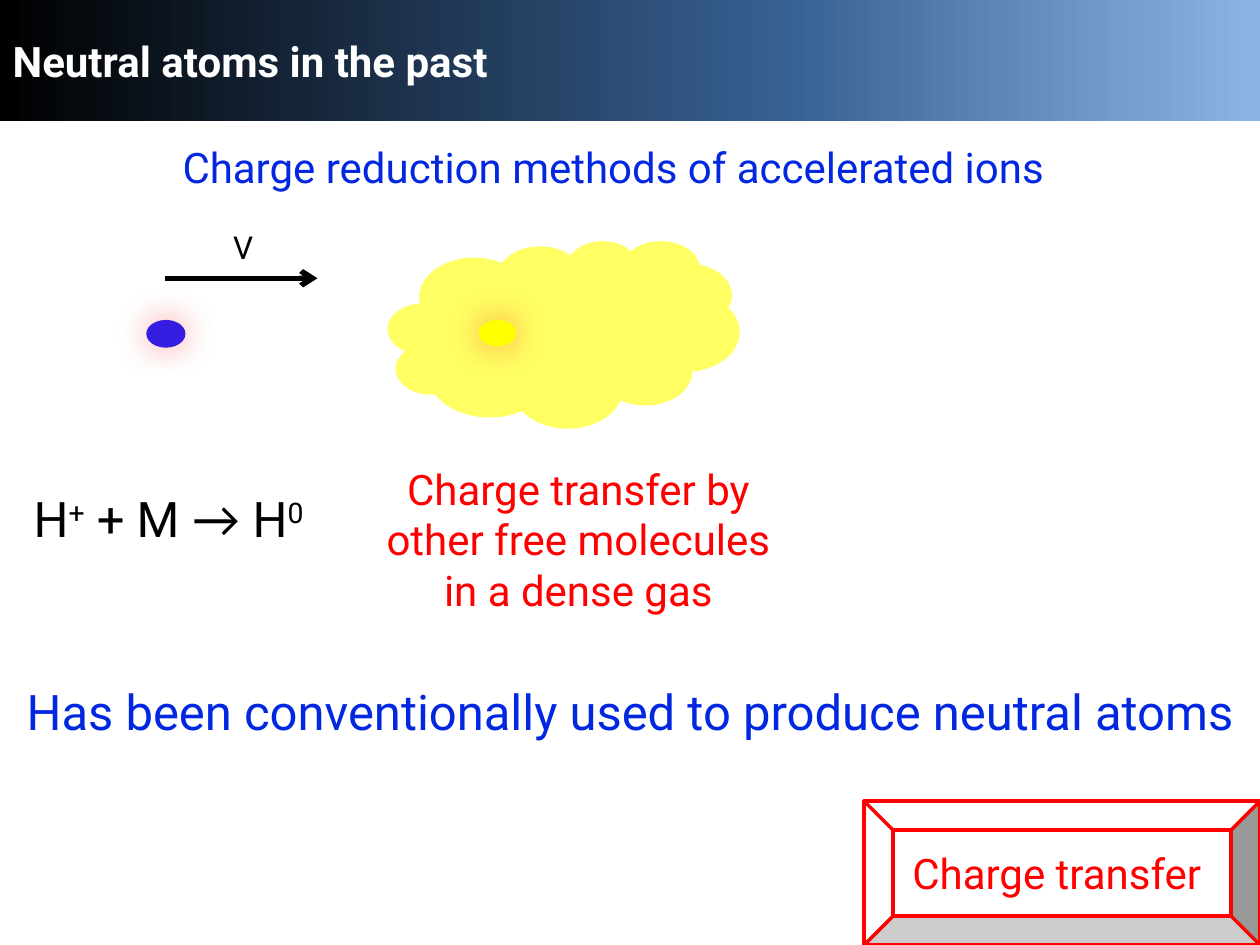
from lxml.etree import SubElement
from pptx import Presentation
from pptx.dml.color import RGBColor
from pptx.enum.shapes import MSO_CONNECTOR as Link, MSO_SHAPE as Kind
from pptx.enum.text import MSO_ANCHOR as Anchor, MSO_AUTO_SIZE as Fit, PP_ALIGN as Align
from pptx.oxml.ns import qn
from pptx.util import Cm, Pt

HUE = {"black": "000000", "white": "FFFFFF", "red": "FF0000", "blue": "0227E0",
       "ion": "351EE2", "gas": "FFFF00", "steel": "376092", "sky": "8EB4E3"}


def color(name):
    """Return the named colour."""
    return RGBColor.from_string(HUE[name])


def place(box):
    """Turn a box in centimetres into lengths."""
    return [Cm(n) for n in box]


def tint(parent, name, alpha):
    """Add a partly clear colour to an XML element."""
    node = SubElement(parent, qn("a:srgbClr"), val=HUE[name])
    SubElement(node, qn("a:alpha"), val=str(alpha * 1000))


def write(frame, parts, size=24, hue="black", bold=False, align=Align.LEFT,
          wrap=True, anchor=Anchor.TOP, fit=Fit.NONE):
    """Fill a frame with one paragraph of (text, font, baseline) parts."""
    if isinstance(parts, str):
        parts = [(parts, "Roboto", 0)]
    frame.word_wrap, frame.auto_size, frame.vertical_anchor = wrap, fit, anchor
    line = frame.paragraphs[0]
    line.alignment = align
    for text, face, base in parts:
        run = line.add_run()
        run.text = text
        font = run.font
        font.name, font.size, font.bold = face, Pt(size), bold
        font.color.rgb = color(hue)
        if base:
            run._r.get_or_add_rPr().set("baseline", str(base * 1000))


def label(slide, box, parts, **style):
    """Add a text box that grows with its text."""
    area = slide.shapes.add_textbox(*place(box))
    write(area.text_frame, parts, fit=Fit.SHAPE_TO_FIT_TEXT, **style)


def shape(slide, kind, box, hue):
    """Add a plain filled shape without an outline."""
    item = slide.shapes.add_shape(kind, *place(box))
    item.shadow.inherit = False
    item.fill.solid()
    item.fill.fore_color.rgb = color(hue)
    item.line.fill.background()
    return item


def header(slide, box):
    """Draw the gradient banner and set the title on it."""
    x, y, w, h = box
    band = shape(slide, Kind.RECTANGLE, box, "black")
    band.fill.gradient()
    band.fill.gradient_angle = 0
    stops = band._element.spPr.find(qn("a:gradFill")).find(qn("a:gsLst"))
    for stop in list(stops):
        stops.remove(stop)
    for spot, name in ((0, "black"), (62, "steel"), (100, "sky")):
        stop = SubElement(stops, qn("a:gs"), pos=str(spot * 1000))
        SubElement(stop, qn("a:srgbClr"), val=HUE[name])
    title = slide.shapes.title
    title._element.addprevious(band._element)
    title.left, title.top, title.width, title.height = place((x, y, w * 0.9, h))
    write(title.text_frame, "Neutral atoms in the past", hue="white", bold=True,
          anchor=Anchor.MIDDLE)


def atom(slide, box, hue):
    """Draw an atom with a soft red halo."""
    core = shape(slide, Kind.OVAL, box, hue)
    halo = SubElement(core._element.spPr.find(qn("a:effectLst")), qn("a:outerShdw"),
                      blurRad=str(Pt(20)), dist="0", dir="0", algn="ctr", rotWithShape="0")
    tint(halo, "red", 40)


def arrow(slide, x, y, length):
    """Draw a level arrow to the right."""
    link = slide.shapes.add_connector(Link.STRAIGHT, *place((x, y, x + length, y)))
    link.line.color.rgb = color("black")
    link.line.width = Pt(3)
    SubElement(link.line._get_or_add_ln(), qn("a:tailEnd"), type="arrow")
    SubElement(link._element.spPr, qn("a:effectLst"))


def scene(slide, box):
    """Show a moving ion that meets a gas cloud."""
    x, y, w, h = box
    cloud = shape(slide, Kind.CLOUD, (x + w - 7.09, y + 0.38, 7.09, 3.78), "gas")
    solid = cloud._element.spPr.find(qn("a:solidFill"))
    solid.clear()
    tint(solid, "gas", 61)
    arrow(slide, x + 0.38, y + 1.14, 3.07)
    label(slide, (x + 1.5, y, 0.94, 1.02), "V", size=18, wrap=False)
    atom(slide, (x, y + 1.98, 0.79, 0.56), "ion")
    atom(slide, (x + 6.7, y + 1.98, 0.76, 0.53), "gas")


def process(slide, box):
    """Write the reaction and its explanation side by side."""
    x, y, w, h = box
    label(slide, (x + w - 8.64, y, 8.64, h),
          "Charge transfer by other free molecules in a dense gas",
          hue="red", align=Align.CENTER)
    label(slide, (x, y + 0.51, 6.22, 1.45),
          [("H", "Roboto", 0), ("+", "Roboto", 30), (" + M ", "Roboto", 0),
           ("→", "Lato", 0), (" H", "Roboto", 0), ("0", "Roboto", 30)],
          size=28, wrap=False)


def badge(slide, box):
    """Draw the bevelled name of the method."""
    plate = shape(slide, Kind.BEVEL, box, "white")
    plate.adjustments[0] = 0.2
    plate.line.color.rgb = color("red")
    plate.line.width = Pt(2)
    write(plate.text_frame, "Charge transfer ", hue="red", align=Align.CENTER,
          anchor=Anchor.MIDDLE)


def main():
    """Build and save the slide."""
    deck = Presentation()
    deck.slide_width, deck.slide_height = Cm(25.4), Cm(19.05)
    slide = deck.slides.add_slide(deck.slide_layouts[5])
    header(slide, (0, 0, 25.4, 2.44))
    label(slide, (3.43, 2.72, 18.01, 1.27),
          "Charge reduction methods of accelerated ions", hue="blue", wrap=False)
    scene(slide, (2.95, 4.47, 11.96, 4.16))
    process(slide, (0.43, 9.22, 15.55, 3.33))
    label(slide, (0, 13.61, 25.4, 1.45),
          "Has been conventionally used to produce neutral atoms",
          size=28, hue="blue", align=Align.CENTER)
    badge(slide, (17.42, 16.15, 7.98, 2.9))
    deck.save("out.pptx")


if __name__ == "__main__":
    main()
